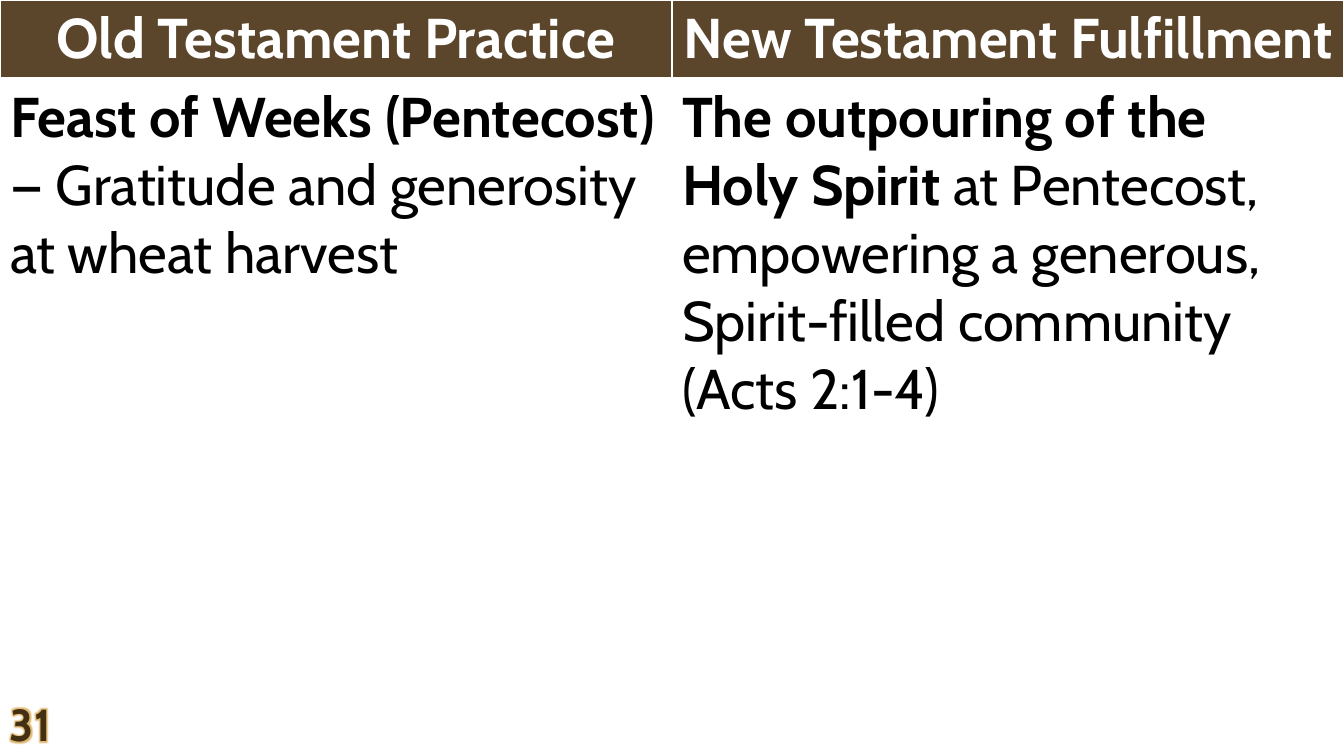
from dataclasses import dataclass

from lxml import etree
from pptx import Presentation
from pptx.dml.color import RGBColor
from pptx.enum import text as t
from pptx.oxml import ns
from pptx.util import Inches, Pt

COLORS = {"white": "FFFFFF", "black": "000000", "brown": "5B462B",
          "number": "432F11", "glow": "E0B870"}
FONT = "Cabin"


@dataclass
class Run:
    text: str
    bold: bool = True


@dataclass
class Cell:
    runs: list[Run]
    header: bool = False


ROWS = [
    [Cell([Run("Old Testament Practice")], True),
     Cell([Run("New Testament Fulfillment")], True)],
    [Cell([Run("Feast of Weeks (Pentecost)"),
           Run(" — Gratitude and generosity at wheat harvest", False)]),
     Cell([Run("The outpouring of the Holy Spirit"),
           Run(" at Pentecost, empowering a generous, "
               "Spirit-filled community (Acts 2:1-4)", False)])],
]


def add_run(p, run: Run, size: int, color: str):
    r = p.add_run()
    r.text = run.text
    r.font.name = FONT
    r.font.size = Pt(size)
    r.font.bold = run.bold
    r.font.color.rgb = RGBColor.from_string(COLORS[color])
    return r


def add_color(parent, color: str) -> None:
    etree.SubElement(parent, ns.qn("a:srgbClr"), val=COLORS[color])


def set_borders(cell, bottom: int) -> None:
    pr = cell._tc.get_or_add_tcPr()
    widths = {"lnL": 1, "lnR": 1, "lnT": 1, "lnB": bottom}
    for i, (side, width) in enumerate(widths.items()):
        ln = etree.Element(ns.qn(f"a:{side}"), w=str(Pt(width)))
        add_color(etree.SubElement(ln, ns.qn("a:solidFill")), "white")
        pr.insert(i, ln)


def draw_cell(cell, content: Cell, bottom: int) -> None:
    p = cell.text_frame.paragraphs[0]
    if content.header:
        p.alignment = t.PP_ALIGN.CENTER
        cell.fill.solid()
        cell.fill.fore_color.rgb = RGBColor.from_string(COLORS["brown"])
    else:
        cell.fill.background()
    for run in content.runs:
        add_run(p, run, 40, "white" if content.header else "black")
    set_borders(cell, bottom)


def draw_table(s) -> None:
    table = s.shapes.add_table(2, 2, 0, 0, Inches(13.33), Inches(7.53)).table
    table.first_row = table.horz_banding = False
    for column in table.columns:
        column.width = Inches(13.33 / 2)
    for row, height in zip(table.rows, (0.78, 6.75)):
        row.height = Inches(height)
    for i, row in enumerate(ROWS):
        for j, content in enumerate(row):
            draw_cell(table.cell(i, j), content, 3 if i == 0 else 1)


def draw_number(s) -> None:
    tf = s.shapes.add_textbox(0, Inches(6.75), Inches(0.7), Inches(0.75)).text_frame
    tf.word_wrap = True
    tf.vertical_anchor = t.MSO_ANCHOR.BOTTOM
    p = tf.paragraphs[0]
    p.line_spacing = 0.9
    p.space_after = Pt(18)
    r = add_run(p, Run("31"), 32, "number")
    effects = etree.Element(ns.qn("a:effectLst"))
    add_color(etree.SubElement(effects, ns.qn("a:glow"), rad=str(Pt(5))), "glow")
    r._r.get_or_add_rPr().find(ns.qn("a:solidFill")).addnext(effects)


def main() -> None:
    prs = Presentation()
    prs.slide_width, prs.slide_height = Inches(13.33), Inches(7.5)
    s = prs.slides.add_slide(prs.slide_layouts[6])
    draw_table(s)
    draw_number(s)
    prs.save("out.pptx")


if __name__ == "__main__":
    main()
